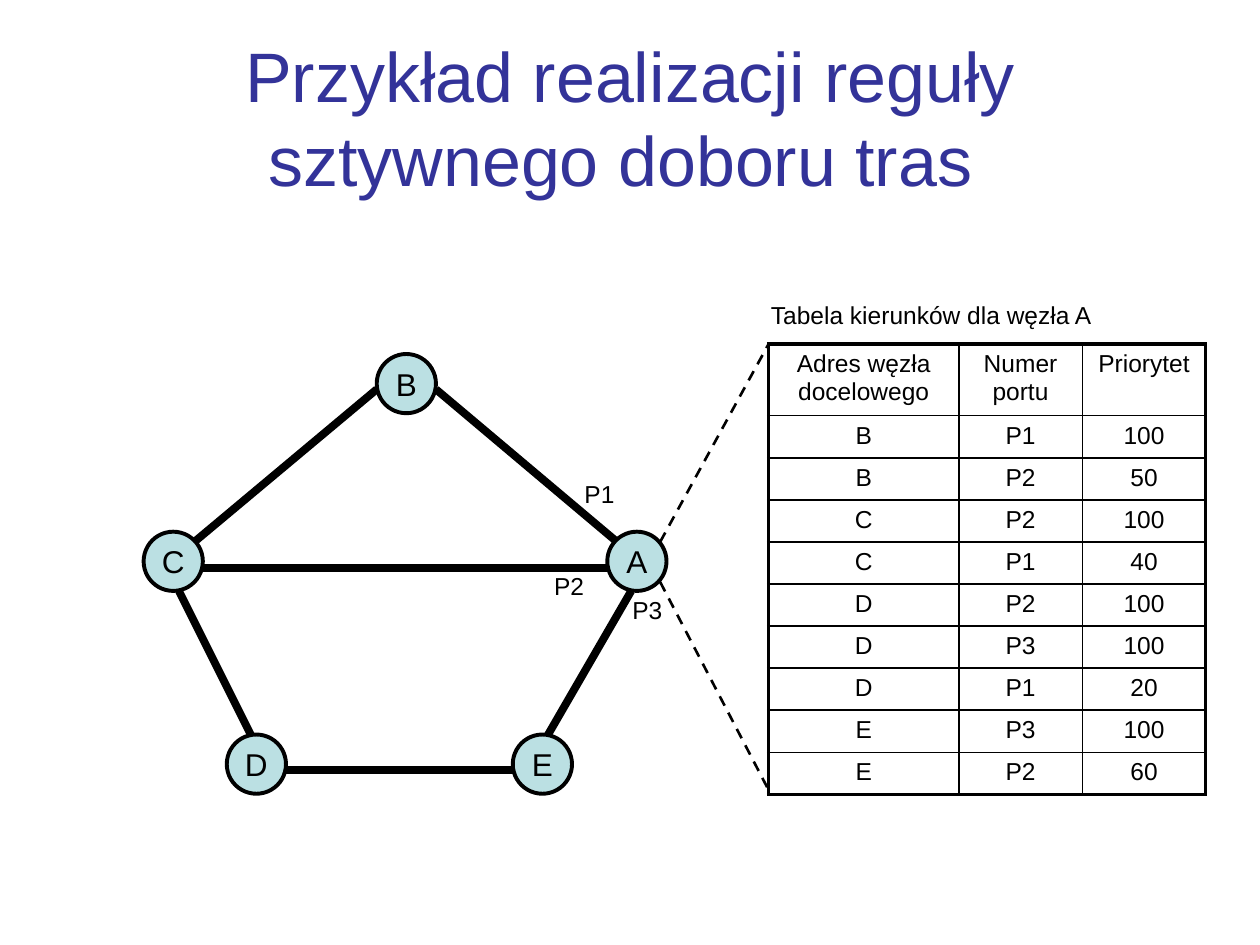
from lxml import etree
from pptx import Presentation
from pptx.dml.color import RGBColor
from pptx.enum.dml import MSO_LINE
from pptx.enum.shapes import MSO_CONNECTOR, MSO_SHAPE
from pptx.enum.text import MSO_ANCHOR, PP_ALIGN
from pptx.oxml.ns import qn
from pptx.util import Inches, Pt

LEFT, CENTER = PP_ALIGN.LEFT, PP_ALIGN.CENTER
MIDDLE = MSO_ANCHOR.MIDDLE
OVAL = MSO_SHAPE.OVAL
STRAIGHT = MSO_CONNECTOR.STRAIGHT
DASH = MSO_LINE.DASH

THEME = {
    "font": "Arial",
    "title": RGBColor(0x33, 0x33, 0x99),
    "ink": RGBColor(0, 0, 0),
    "node": RGBColor(0xBB, 0xE0, 0xE3),
    "title_size": 40, "node_size": 18, "text_size": 14,
    "link": 4.5, "rim": 2.25, "grid": 1, "zoom": 1.5,
}

TITLE = "Przykład realizacji reguły sztywnego doboru tras "
CAPTION = "Tabela kierunków dla węzła A"

SIZE = 0.47
NODES = {"B": (2.99, 2.81), "C": (1.14, 4.22), "A": (4.82, 4.22),
         "D": (1.8, 5.83), "E": (4.07, 5.83)}
# Each end is a node and the offset from its top left corner
LINKS = [
    ("C", (0.38, 0.1), "B", (0, 0.28)),
    ("B", (SIZE, 0.28), "A", (0.1, 0.1)),
    ("C", (0.28, SIZE), "D", (0.19, 0)),
    ("D", (SIZE, 0.28), "E", (0, 0.28)),
    ("C", (SIZE, 0.29), "A", (0, 0.29)),
    ("A", (0.19, SIZE), "E", (0.28, 0)),
]
PORTS = {"P1": (4.54, 3.75), "P2": (4.3, 4.48), "P3": (4.92, 4.67)}

ROUTES = [
    ("Adres węzła docelowego", "Numer portu", "Priorytet"),
    ("B", "P1", "100"),
    ("B", "P2", "50"),
    ("C", "P2", "100"),
    ("C", "P1", "40"),
    ("D", "P2", "100"),
    ("D", "P3", "100"),
    ("D", "P1", "20"),
    ("E", "P3", "100"),
    ("E", "P2", "60"),
]
TABLE_AT = (6.1, 2.73)
COLS = (1.51, 0.98, 0.98)
HEAD, ROW = 0.57, 0.33
ZOOM = [((0.42, 0.08), 2.73), ((0.42, 0.4), 6.27)]


def write(frame, text, size, color=THEME["ink"], align=LEFT, before=0):
    """Set one paragraph; before is the space above in percent of a line."""
    frame.text = text
    para = frame.paragraphs[0]
    para.alignment = align
    if before:
        gap = etree.SubElement(para._p.get_or_add_pPr(), qn("a:spcBef"))
        etree.SubElement(gap, qn("a:spcPct"), val=str(before * 1000))
    font = para.runs[0].font
    font.name, font.size, font.bold = THEME["font"], Pt(size), False
    font.color.rgb = color


def spot(name, shift):
    return tuple(a + b for a, b in zip(NODES[name], shift))


def add_line(slide, start, end, width, dash=None):
    line = slide.shapes.add_connector(
        STRAIGHT, *(Inches(v) for v in (*start, *end)))
    line.line.color.rgb = THEME["ink"]
    line.line.width = Pt(width)
    if dash:
        line.line.dash_style = dash
    etree.SubElement(line._element.spPr, qn("a:effectLst"))


def add_node(slide, name, at):
    node = slide.shapes.add_shape(
        OVAL, *(Inches(v) for v in (*at, SIZE, SIZE)))
    node.shadow.inherit = False
    node.fill.solid()
    node.fill.fore_color.rgb = THEME["node"]
    node.line.color.rgb = THEME["ink"]
    node.line.width = Pt(THEME["rim"])
    node.text_frame.word_wrap = False
    node.text_frame.vertical_anchor = MIDDLE
    write(node.text_frame, name, THEME["node_size"], align=CENTER)


def add_label(slide, text, at, size, wrap=False, before=0):
    box = slide.shapes.add_textbox(*(Inches(v) for v in (*at, *size)))
    box.text_frame.word_wrap = wrap
    write(box.text_frame, text, THEME["text_size"], before=before)


def add_borders(cell, outer):
    """Draw the four sides, thick where the side is in outer."""
    props = cell._tc.get_or_add_tcPr()
    for side in "LRTB":
        width = THEME["rim"] if side in outer else THEME["grid"]
        line = etree.SubElement(props, qn("a:ln" + side), w=str(Pt(width)))
        fill = etree.SubElement(line, qn("a:solidFill"))
        etree.SubElement(fill, qn("a:srgbClr"), val=str(THEME["ink"]))


def add_routes(slide):
    last_row, last_col = len(ROUTES) - 1, len(COLS) - 1
    box = (*TABLE_AT, sum(COLS), HEAD + ROW * last_row)
    table = slide.shapes.add_table(
        len(ROUTES), len(COLS), *(Inches(v) for v in box)).table
    table.first_row = table.horz_banding = False
    for col, width in zip(table.columns, COLS):
        col.width = Inches(width)
    for r, values in enumerate(ROUTES):
        table.rows[r].height = Inches(ROW if r else HEAD)
        for c, value in enumerate(values):
            cell = table.cell(r, c)
            write(cell.text_frame, value, THEME["text_size"],
                  align=CENTER, before=20)
            edges = {"L": c == 0, "R": c == last_col,
                     "T": r == 0, "B": r == last_row}
            add_borders(cell, [side for side in edges if edges[side]])
            cell.fill.background()


def main():
    deck = Presentation()
    deck.slide_width, deck.slide_height = Inches(10), Inches(7.5)
    slide = deck.slides.add_slide(deck.slide_layouts[5])

    title = slide.shapes.title
    title.left, title.top = Inches(0.5), Inches(0.3)
    title.width, title.height = Inches(9), Inches(1.25)
    title.text_frame.vertical_anchor = MIDDLE
    write(title.text_frame, TITLE, THEME["title_size"], THEME["title"], CENTER)

    for first, out, second, into in LINKS:
        add_line(slide, spot(first, out), spot(second, into), THEME["link"])
    for name, at in NODES.items():
        add_node(slide, name, at)
    for name, at in PORTS.items():
        add_label(slide, name, at, (0.44, 0.33))

    add_label(slide, CAPTION, (6.02, 2.33), (3.23, 0.34), True, 50)
    add_routes(slide)
    for shift, y in ZOOM:
        add_line(slide, spot("A", shift), (TABLE_AT[0], y),
                 THEME["zoom"], DASH)
    deck.save("out.pptx")


if __name__ == "__main__":
    main()
